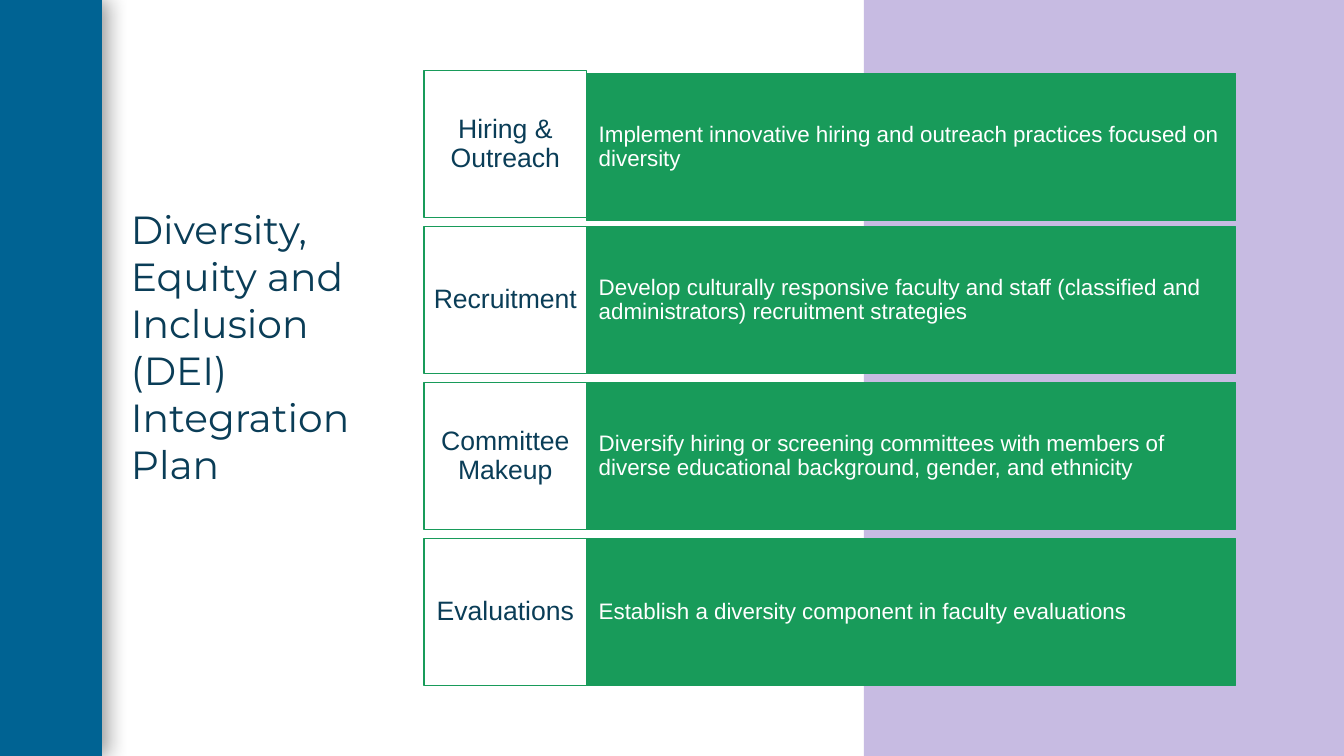
from lxml import etree
from pptx import Presentation
from pptx.dml.color import RGBColor
from pptx.enum.shapes import MSO_SHAPE
from pptx.enum.text import MSO_ANCHOR, PP_ALIGN
from pptx.oxml import parse_xml
from pptx.util import Cm, Pt

GREEN, NAVY, WHITE = "189B5A", "0A3D57", "FFFFFF"


def add_block(left, top, width, height, fill, line=None):
    block = slide.shapes.add_shape(
        MSO_SHAPE.RECTANGLE, Cm(left), Cm(top), Cm(width), Cm(height))
    block.shadow.inherit = False
    block.fill.solid()
    block.fill.fore_color.rgb = RGBColor.from_string(fill)
    if line:
        block.line.color.rgb = RGBColor.from_string(line)
        block.line.width = Pt(1)
    else:
        block.line.fill.background()
    return block


def write(box, text, size, color, font, align=PP_ALIGN.LEFT, spacing=None):
    box.text_frame.word_wrap = True
    paragraph = box.text_frame.paragraphs[0]
    paragraph.text = text
    paragraph.alignment = align
    paragraph.line_spacing = spacing
    paragraph.font.size = Pt(size)
    paragraph.font.name = font
    paragraph.font.color.rgb = RGBColor.from_string(color)


deck = Presentation()
deck.slide_width, deck.slide_height = Cm(33.87), Cm(19.05)
slide = deck.slides.add_slide(deck.slide_layouts[6])

# Side band with a soft shadow, and the lilac panel
side_band = add_block(0, 0, 2.57, 19.05, "006393")
effects = side_band.fill._xPr.find(
    "{http://schemas.openxmlformats.org/drawingml/2006/main}effectLst")
effects.append(parse_xml(
    '<a:outerShdw xmlns:a="http://schemas.openxmlformats.org/drawingml/2006/main"'
    f' blurRad="{Pt(15)}" dist="{Pt(3)}" dir="0" algn="l" rotWithShape="0">'
    '<a:srgbClr val="000000"><a:alpha val="40000"/></a:srgbClr></a:outerShdw>'))
add_block(21.77, 0, 12.1, 19.05, "C7BBE2")

# Plan areas: green description, then white label
areas = [
    ("Hiring & Outreach",
     "Implement innovative hiring and outreach practices focused on diversity"),
    ("Recruitment",
     "Develop culturally responsive faculty and staff (classified and "
     "administrators) recruitment strategies"),
    ("Committee Makeup",
     "Diversify hiring or screening committees with members of diverse "
     "educational background, gender, and ethnicity"),
    ("Evaluations",
     "Establish a diversity component in faculty evaluations"),
]
first_top, row_pitch, row_height = 1.78, 3.93, 3.71
for row, (area, action) in enumerate(areas):
    top = first_top + row * row_pitch
    action_top = top + 0.07 if row == 0 else top
    action_block = add_block(14.78, action_top, 16.36, row_height, GREEN, GREEN)
    write(action_block, action, 16, WHITE, "Arial", spacing=0.9)
    area_block = add_block(10.69, top, 4.09, row_height, WHITE, GREEN)
    write(area_block, area, 19, NAVY, "Arial", PP_ALIGN.CENTER, 0.9)
    for block, side, edge in ((action_block, 0.31, 0.94), (area_block, 0.2, 0.36)):
        frame = block.text_frame
        frame.vertical_anchor = MSO_ANCHOR.MIDDLE
        frame.margin_left = frame.margin_right = Cm(side)
        frame.margin_top = frame.margin_bottom = Cm(edge)

# Title
title = slide.shapes.add_textbox(Cm(3.05), Cm(5.05), Cm(7.11), Cm(7.44))
write(title, "Diversity, Equity and Inclusion (DEI) Integration Plan",
      28, NAVY, "Montserrat")

deck.save("out.pptx")
